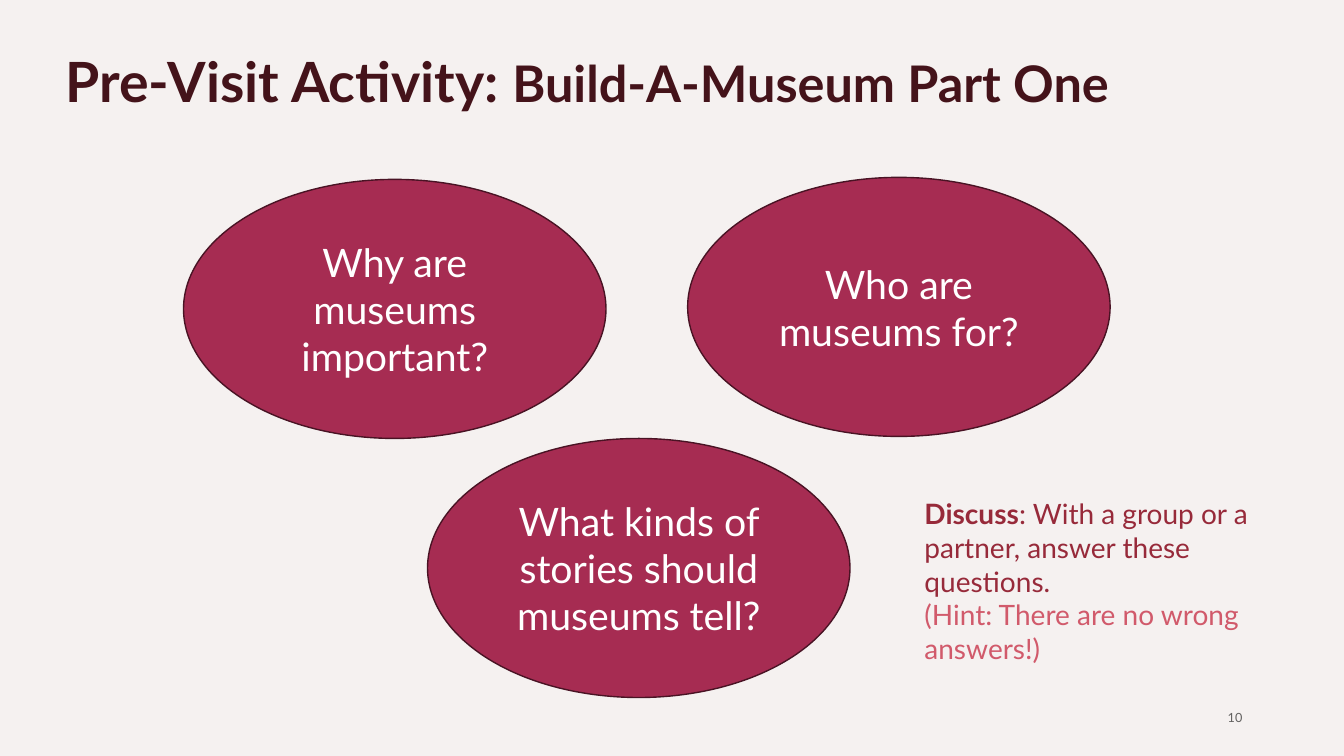
import pptx
import pptx.dml.color
import pptx.enum.shapes
import pptx.enum.text
import pptx.util

EMU_PER_PX = 9144
FONT = "Lato"
ALIGN = pptx.enum.text.PP_ALIGN
ANCHOR = pptx.enum.text.MSO_ANCHOR

QUESTION_SIZE = (419, 257)
QUESTIONS = [
    (182, 178, "Why are museums important?"),
    (682, 176, "Who are museums for?"),
    (424, 435, "What kinds of stories should museums tell?"),
]


def px(length):
    return pptx.util.Emu(length * EMU_PER_PX)


def color(value):
    return pptx.dml.color.RGBColor.from_string(value)


def format_run(run, size, fill, bold=False):
    run.font.name = FONT
    run.font.size = pptx.util.Pt(size)
    run.font.bold = bold
    run.font.color.rgb = color(fill)


def add_run(paragraph, text, size, fill, bold=False):
    run = paragraph.add_run()
    run.text = text
    format_run(run, size, fill, bold)


def add_text_box(slide, left, top, width, height):
    shape = slide.shapes.add_textbox(px(left), px(top), px(width), px(height))
    shape.text_frame.word_wrap = True
    return shape.text_frame


def add_title(slide):
    title = slide.shapes.title
    title.left, title.top, title.width, title.height = map(px, (55, 39, 1142, 82))
    title.text_frame.vertical_anchor = ANCHOR.MIDDLE
    paragraph = title.text_frame.paragraphs[0]
    paragraph.alignment = ALIGN.LEFT
    add_run(paragraph, "Pre-Visit Activity: ", 39.6, "44131A", True)
    add_run(paragraph, "Build-A-Museum Part One", 36, "44131A", True)


def add_question(slide, left, top, text):
    width, height = QUESTION_SIZE
    shape = slide.shapes.add_shape(
        pptx.enum.shapes.MSO_SHAPE.OVAL, px(left), px(top), px(width), px(height))
    shape.shadow.inherit = False
    shape.fill.solid()
    shape.fill.fore_color.rgb = color("A62C52")
    shape.line.color.rgb = color("491324")
    shape.line.width = pptx.util.Pt(1)
    text_frame = shape.text_frame
    text_frame.word_wrap = True
    text_frame.vertical_anchor = ANCHOR.MIDDLE
    text_frame.text = text
    paragraph = text_frame.paragraphs[0]
    paragraph.alignment = ALIGN.CENTER
    format_run(paragraph.runs[0], 28, "FFFFFF")


def add_discussion(slide):
    text_frame = add_text_box(slide, 907, 488, 388, 178)
    prompt = text_frame.paragraphs[0]
    add_run(prompt, "Discuss", 20, "972A3A", True)
    add_run(prompt, ": With a group or a partner, answer these questions.", 20, "972A3A")
    hint = text_frame.add_paragraph()
    add_run(hint, "(Hint: There are no wrong answers!)", 20, "D15A6B")


def add_slide_number(slide):
    text_frame = add_text_box(slide, 942, 692, 300, 40)
    text_frame.vertical_anchor = ANCHOR.MIDDLE
    text_frame.text = "10"
    paragraph = text_frame.paragraphs[0]
    paragraph.alignment = ALIGN.RIGHT
    format_run(paragraph.runs[0], 9, "626160")


def main():
    presentation = pptx.Presentation()
    presentation.slide_width = px(1333)
    presentation.slide_height = px(750)
    slide = presentation.slides.add_slide(presentation.slide_layouts[5])
    slide.background.fill.solid()
    slide.background.fill.fore_color.rgb = color("F5F1F0")
    add_title(slide)
    add_slide_number(slide)
    for left, top, text in QUESTIONS:
        add_question(slide, left, top, text)
    add_discussion(slide)
    presentation.save("out.pptx")


if __name__ == "__main__":
    main()
